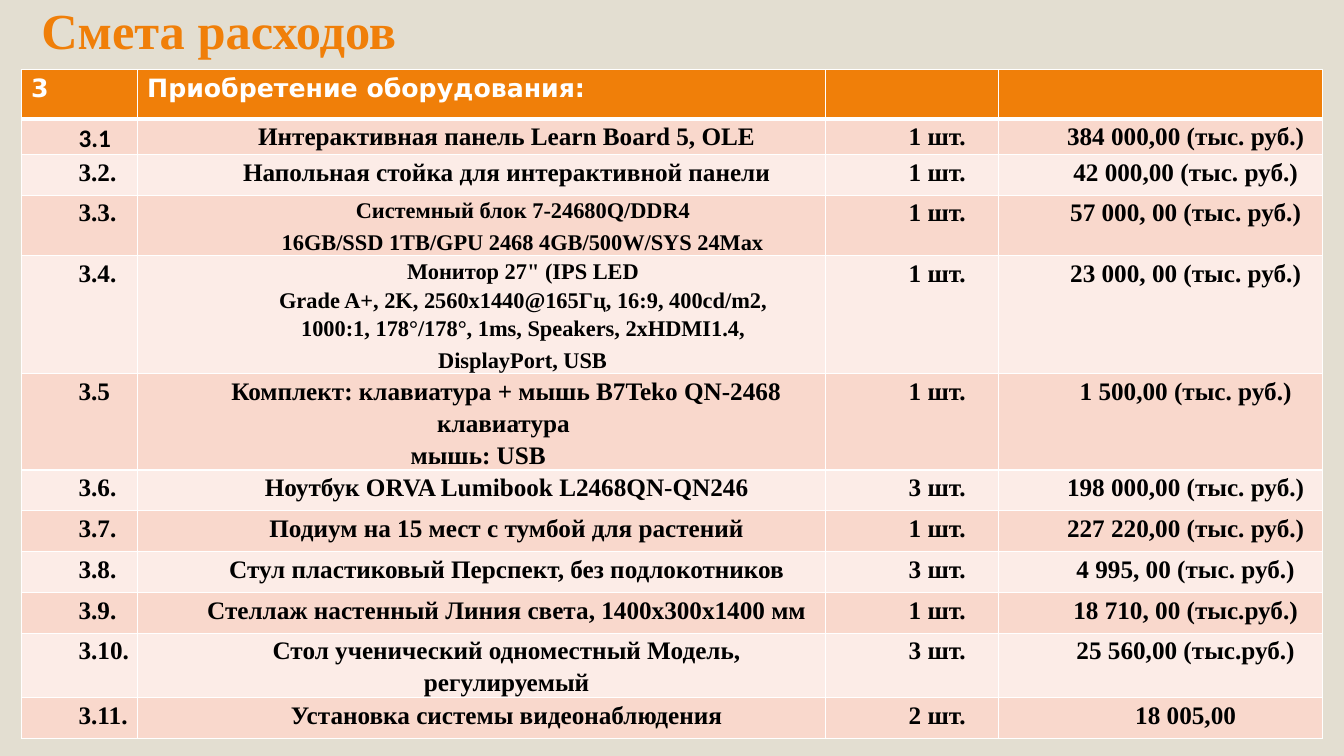
from dataclasses import dataclass

from lxml.etree import SubElement
from pptx import Presentation
from pptx.dml.color import RGBColor
from pptx.enum.text import MSO_ANCHOR, MSO_AUTO_SIZE, PP_ALIGN
from pptx.oxml.ns import qn
from pptx.slide import Slide
from pptx.table import _Cell
from pptx.text.text import TextFrame, _Paragraph
from pptx.util import Inches, Pt


@dataclass(frozen=True)
class Theme:
    background: str = "E3DED1"
    accent: str = "F07F09"
    bands: tuple[str, str] = ("F9D8CC", "FCECE7")
    white: str = "FFFFFF"
    black: str = "000000"
    serif: str = "Times New Roman"
    sans: str = "Calibri"
    header: str = "DejaVu Sans"
    title_size: float = 36
    body_size: float = 18
    detail_size: float = 16
    thin_border: float = 1
    thick_border: float = 3


THEME = Theme()


@dataclass(frozen=True)
class Line:
    text: str
    size: float = THEME.body_size
    left: float = 0.5
    indent: float = 0
    tail: str = ""


@dataclass(frozen=True)
class Item:
    number: str
    name: tuple[Line, ...]
    quantity: str
    price: str
    height: float = 0.405
    number_font: str = THEME.serif


def detail(text: str, tail: str = "") -> Line:
    return Line(text, size=THEME.detail_size, indent=0.38, tail=tail)


COLUMN_WIDTHS = (1.15, 6.83, 1.71, 3.22)
HEADER_HEIGHT = 0.49
HEADINGS = ("3", "Приобретение оборудования:", "", "")
ITEMS = (
    Item("3.1", (Line("Интерактивная панель Learn Board 5, OLE"),),
         "1 шт.", "384 000,00 (тыс. руб.)", 0.35, THEME.sans),
    Item("3.2.", (Line("Напольная стойка для интерактивной панели"),),
         "1 шт.", "42 000,00 (тыс. руб.)"),
    Item("3.3.", (detail("Системный блок 7-24680Q/DDR4 "),
                  detail("16GB/SSD 1TB/GPU 2468 4GB/500W/SYS 24Max", " ")),
         "1 шт.", "57 000, 00 (тыс. руб.)", 0.6),
    Item("3.4.", (detail("Монитор 27\" (IPS LED "),
                  detail("Grade A+, 2K, 2560x1440@165Гц, 16:9, 400cd/m2, "),
                  detail("1000:1, 178°/178°, 1ms, Speakers, 2xHDMI1.4, "),
                  detail("DisplayPort, USB", " ")),
         "1 шт.", "23 000, 00 (тыс. руб.)", 1.17),
    Item("3.5", (Line("Комплект: клавиатура + мышь B7Teko QN-2468 клавиатура ", indent=-0.01),
                 Line("мышь: USB ", left=0)),
         "1 шт.", "1 500,00 (тыс. руб.)", 0.95),
    Item("3.6.", (Line("Ноутбук ORVA Lumibook L2468QN-QN246"),),
         "3 шт.", "198 000,00 (тыс. руб.)"),
    Item("3.7.", (Line("Подиум на 15 мест с тумбой для растений"),),
         "1 шт.", "227 220,00 (тыс. руб.)"),
    Item("3.8.", (Line("Стул пластиковый Перспект, без подлокотников"),),
         "3 шт.", "4 995, 00 (тыс. руб.)"),
    Item("3.9.", (Line("Стеллаж настенный Линия света, 1400х300х1400 мм"),),
         "1 шт.", "18 710, 00 (тыс.руб.)"),
    Item("3.10.", (Line("Стол ученический одноместный Модель, регулируемый"),),
         "3 шт.", "25 560,00 (тыс.руб.)", 0.64),
    Item("3.11.", (Line("Установка системы видеонаблюдения"),),
         "2 шт.", "18 005,00"),
)


def add_text(paragraph: _Paragraph, text: str, *, size: float = THEME.body_size,
             font: str = THEME.serif, color: str = THEME.black) -> None:
    run = paragraph.add_run()
    run.text = text
    run.font.name = font
    run.font.size = Pt(size)
    run.font.bold = True
    run.font.color.rgb = RGBColor.from_string(color)


def set_margins(target: TextFrame | _Cell, left: float, top: float,
                right: float, bottom: float) -> None:
    target.margin_left, target.margin_top = Inches(left), Inches(top)
    target.margin_right, target.margin_bottom = Inches(right), Inches(bottom)


def style_cell(cell: _Cell, fill: str, top: float, bottom: float) -> None:
    """Border elements must precede the fill in the cell properties."""
    properties = cell._tc.get_or_add_tcPr()
    thin = THEME.thin_border
    for side, width in (("L", thin), ("R", thin), ("T", top), ("B", bottom)):
        border = SubElement(properties, qn(f"a:ln{side}"), w=str(Pt(width)))
        solid = SubElement(border, qn("a:solidFill"))
        SubElement(solid, qn("a:srgbClr"), val=THEME.white)
    cell.fill.solid()
    cell.fill.fore_color.rgb = RGBColor.from_string(fill)


def write_lines(cell: _Cell, lines: tuple[Line, ...], *, align: PP_ALIGN,
                font: str = THEME.serif) -> None:
    set_margins(cell, 0.07, 0, 0.07, 0)
    frame = cell.text_frame
    for index, line in enumerate(lines):
        paragraph = frame.add_paragraph() if index else frame.paragraphs[0]
        paragraph.alignment = align
        paragraph.line_spacing = 1.15
        properties = paragraph._p.get_or_add_pPr()
        properties.set("marL", str(Inches(line.left)))
        properties.set("indent", str(Inches(line.indent)))
        add_text(paragraph, line.text, size=line.size, font=font)
        if line.tail:
            add_text(paragraph, line.tail)


def add_title(slide: Slide) -> None:
    title = slide.shapes.title
    title.left, title.top = Inches(0.21), Inches(-0.11)
    title.width, title.height = Inches(10.81), Inches(0.57)
    frame = title.text_frame
    frame.word_wrap = True
    frame.auto_size = MSO_AUTO_SIZE.NONE
    frame.vertical_anchor = MSO_ANCHOR.TOP
    set_margins(frame, 0.2, 0.1, 0.1, 0.05)
    paragraph = frame.paragraphs[0]
    paragraph.alignment = PP_ALIGN.LEFT
    paragraph.space_before = Pt(2.5)
    add_text(paragraph, "Смета расходов", size=THEME.title_size, color=THEME.accent)


def add_budget_table(slide: Slide) -> None:
    heights = (HEADER_HEIGHT, *(item.height for item in ITEMS))
    table = slide.shapes.add_table(
        len(heights), len(COLUMN_WIDTHS), Inches(0.21), Inches(0.69),
        Inches(sum(COLUMN_WIDTHS)), Inches(sum(heights))).table
    for column, width in zip(table.columns, COLUMN_WIDTHS):
        column.width = Inches(width)
    for row, height in zip(table.rows, heights):
        row.height = Inches(height)

    for cell, heading in zip(table.rows[0].cells, HEADINGS):
        style_cell(cell, THEME.accent, THEME.thin_border, THEME.thick_border)
        if heading:
            add_text(cell.text_frame.paragraphs[0], heading,
                     font=THEME.header, color=THEME.white)

    for index, item in enumerate(ITEMS):
        cells = list(table.rows[index + 1].cells)
        top = THEME.thin_border if index else THEME.thick_border
        for cell in cells:
            style_cell(cell, THEME.bands[index % 2], top, THEME.thin_border)
        number, name, quantity, price = cells
        write_lines(number, (Line(item.number),), align=PP_ALIGN.JUSTIFY, font=item.number_font)
        write_lines(name, item.name, align=PP_ALIGN.CENTER)
        write_lines(quantity, (Line(item.quantity),), align=PP_ALIGN.CENTER)
        write_lines(price, (Line(item.price),), align=PP_ALIGN.CENTER)


def main() -> None:
    presentation = Presentation()
    presentation.slide_width, presentation.slide_height = Inches(13.33), Inches(7.5)
    slide = presentation.slides.add_slide(presentation.slide_layouts.get_by_name("Title Only"))
    slide.background.fill.solid()
    slide.background.fill.fore_color.rgb = RGBColor.from_string(THEME.background)
    add_title(slide)
    add_budget_table(slide)
    presentation.save("out.pptx")


if __name__ == "__main__":
    main()
